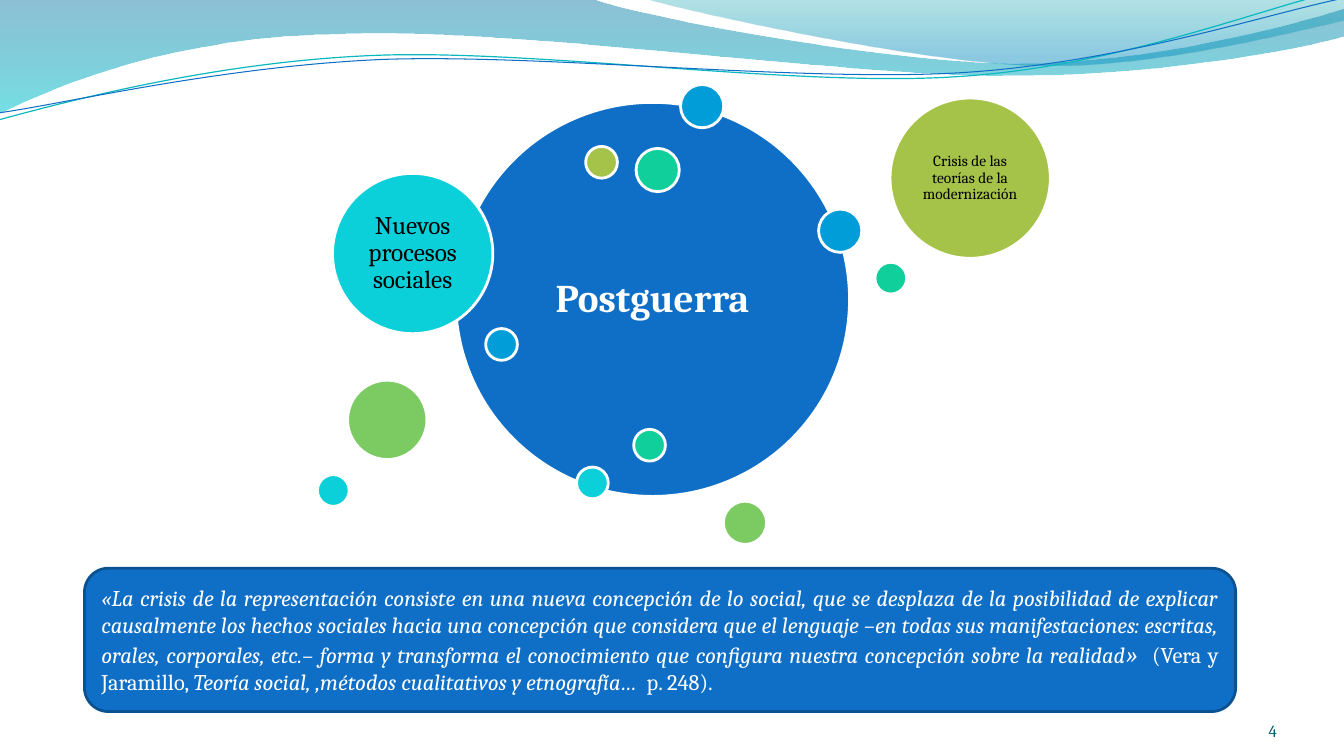
import math

import pptx
import pptx.util
import pptx.oxml
import pptx.oxml.ns
from pptx.dml.color import RGBColor
from pptx.enum.shapes import MSO_SHAPE
from pptx.enum.text import MSO_ANCHOR, PP_ALIGN

Cm = pptx.util.Cm
Pt = pptx.util.Pt
qn = pptx.oxml.ns.qn

WHITE = RGBColor(0xFF, 0xFF, 0xFF)
BLACK = RGBColor(0, 0, 0)
BLUE = RGBColor(0x0F, 0x6F, 0xC6)
NAVY = RGBColor(0x0B, 0x52, 0x92)
SKY = RGBColor(0x00, 0x9D, 0xD9)
CYAN = RGBColor(0x0B, 0xD0, 0xD9)
MINT = RGBColor(0x10, 0xCF, 0x9B)
GREEN = RGBColor(0x7C, 0xCA, 0x62)
OLIVE = RGBColor(0xA5, 0xC2, 0x49)
TEAL = RGBColor(0x0A, 0xB8, 0xBF)
SLATE = RGBColor(0x04, 0x5D, 0x75)

# Wave outlines in cm: two numbers are a line, six a curve
# Stops: place, colour, opacity in percent
WAVES = [
    ([(0, 0), (14.91, -0.03), (16.1, 0.43, 22.48, 1.6, 25.68, 1.6),
      (28.91, 1.6, 32.46, 0.66, 33.86, 0.23), (33.91, 0.91),
      (33.3, 1.12, 29.46, 1.93, 25.25, 1.91),
      (21.06, 1.91, 12.93, 0.71, 8.71, 0.86),
      (4.37, 0.91, 1.55, 2.11, -0.03, 2.87)],
     [(0, RGBColor(0x00, 0x74, 0xA1), 45), (1, RGBColor(0x00, 0xC6, 0xCF), 55)]),
    ([(16.23, -0.03), (17.25, 0.28, 23.09, 1.57, 26.04, 1.65),
      (28.98, 1.75, 32.56, 0.81, 33.86, 0.53), (33.86, 0)],
     [(0, RGBColor(0x00, 0xA1, 0xA9), 30), (0.8, RGBColor(0x00, 0x8B, 0xBF), 45)]),
]
# Thin curves, tilted about a middle point
TILT = 2.7
CURVES = [
    ([(-0.03, 3.02), (1.63, 2.57, 5.36, 1.57, 9.37, 1.4),
      (13.39, 1.22, 20.07, 2.21, 24.13, 1.93),
      (28.19, 1.68, 31.8, 0.2, 33.81, -0.25)], (16.89, 1.46), TEAL, 0.85),
    ([(0, 2.84), (1.6, 2.62, 5.54, 1.68, 9.6, 1.5),
      (13.64, 1.35, 20.22, 2.08, 24.26, 1.83),
      (28.32, 1.57, 31.88, 0.36, 33.88, -0.05)], (16.94, 1.5), BLUE, 0.75),
]

# Circles: left, top, width, colour
HUB, LOBE, BALL, DOT, BEAD = 9.93, 4.04, 2, 1.09, 0.8
DISCS = [
    (11.48, 2.58, HUB, BLUE), (17.15, 2.13, DOT, SKY), (14.53, 11.77, BEAD, CYAN),
    (22.05, 6.61, BEAD, MINT), (18.23, 12.63, DOT, GREEN), (14.76, 3.69, BEAD, OLIVE),
    (12.24, 8.28, BEAD, SKY), (8.38, 4.37, LOBE, CYAN), (16.03, 3.74, DOT, MINT),
    (8.76, 9.58, BALL, GREEN), (22.43, 2.47, LOBE, OLIVE), (20.63, 5.27, DOT, SKY),
    (8, 11.96, BEAD, CYAN), (15.97, 10.82, BEAD, MINT),
]
# Labels by circle: text, inset, font
LABELS = {
    0: ("Postguerra", 0.3, {"size": Pt(28), "bold": True, "color": WHITE}),
    7: ("Nuevos procesos sociales", 0.18, {"size": Pt(18), "color": BLACK}),
    10: ("Crisis de las teorías de la modernización", 0.13,
         {"size": Pt(11), "color": BLACK}),
}

QUOTE = [
    ("«La crisis de la representación consiste en una nueva concepción de lo "
     "social, que se desplaza de la posibilidad de explicar causalmente los "
     "hechos sociales hacia una concepción que considera que el lenguaje –en "
     "todas sus manifestaciones: escritas, orales, corporales, etc.– forma y "
     "transforma el conocimiento que configura nuestra concepción sobre la "
     "realidad", 16, True),
    ("»  ", 18, True),
    ("(Vera y Jaramillo, ", 16, False),
    ("Teoría social, ,métodos cualitativos y etnografía…", 16, True),
    ("  p. 248).", 16, False),
]


def level(part, mid):
    """Turn the points of one path part by the tilt."""
    cos, sin = math.cos(math.radians(TILT)), math.sin(math.radians(TILT))
    flat = []
    for x, y in zip(part[::2], part[1::2]):
        dx, dy = x - mid[0], y - mid[1]
        flat += [mid[0] + dx * cos - dy * sin, mid[1] + dx * sin + dy * cos]
    return flat


def outline(slide, path, close):
    """Draw a freeform, then join each curve's three points into one curve."""
    pts = [(Cm(x), Cm(y)) for part in path for x, y in zip(part[::2], part[1::2])]
    pen = slide.shapes.build_freeform(*pts[0])
    pen.add_line_segments(pts[1:], close=close)
    shape = pen.convert_to_shape()
    shape.shadow.inherit = False
    legs = iter(list(shape._element.spPr.iter(qn("a:lnTo"))))
    for part in path[1:]:
        first = next(legs)
        if len(part) == 6:
            first.tag = qn("a:cubicBezTo")
            for _ in range(2):
                leg = next(legs)
                first.append(leg[0])
                leg.getparent().remove(leg)
    return shape


def wave(slide, path, stops):
    shape = outline(slide, path, True)
    shape.line.fill.background()
    fill = shape.fill
    fill.gradient()
    fill.gradient_angle = 270
    for stop, (place, color, _) in zip(fill.gradient_stops, stops):
        stop.position = place
        stop.color.rgb = color
    tints = list(shape._element.spPr.iter(qn("a:srgbClr")))
    for tint, (_, _, part) in zip(tints, stops):
        tint.append(pptx.oxml.parse_xml(
            '<a:alpha %s val="%d"/>' % (pptx.oxml.ns.nsdecls("a"), part * 1000)))


def curve(slide, path, mid, color, width):
    shape = outline(slide, [level(part, mid) for part in path], False)
    shape.rotation = -TILT
    shape.fill.background()
    shape.line.color.rgb = color
    shape.line.width = Pt(width)


def solid(slide, kind, spot, color, edge):
    shape = slide.shapes.add_shape(kind, *[Cm(v) for v in spot])
    shape.shadow.inherit = False
    shape.fill.solid()
    shape.fill.fore_color.rgb = color
    shape.line.color.rgb = edge
    shape.line.width = Pt(2)
    return shape


def frame(shape, anchor, inset=None):
    text = shape.text_frame
    look = {"word_wrap": True, "vertical_anchor": anchor}
    if inset is not None:
        for side in ("left", "top", "right", "bottom"):
            look["margin_" + side] = Cm(inset)
    for key, val in look.items():
        setattr(text, key, val)
    return text.paragraphs[0]


def write(para, text, look):
    run = para.add_run()
    run.text = text
    run.font.name = "Cambria"
    for key, val in look.items():
        if key == "color":
            run.font.color.rgb = val
        else:
            setattr(run.font, key, val)


def main():
    prs = pptx.Presentation()
    prs.slide_width, prs.slide_height = Cm(33.87), Cm(19.05)
    slide = prs.slides.add_slide(prs.slide_layouts[6])

    # Wavy header
    for item in WAVES:
        wave(slide, *item)
    for item in CURVES:
        curve(slide, *item)

    # Page number
    box = slide.shapes.add_textbox(Cm(29.36), Cm(17.65), Cm(2.82), Cm(1.02))
    para = frame(box, MSO_ANCHOR.BOTTOM, 0)
    para.alignment = PP_ALIGN.RIGHT
    write(para, "4", {"size": Pt(12), "color": SLATE})

    # Circles and their labels
    for i, (left, top, size, color) in enumerate(DISCS):
        disc = solid(slide, MSO_SHAPE.OVAL, (left, top, size, size), color, WHITE)
        if i in LABELS:
            text, inset, look = LABELS[i]
            para = frame(disc, MSO_ANCHOR.MIDDLE, inset)
            para.alignment = PP_ALIGN.CENTER
            para.line_spacing = 0.9
            write(para, text, look)

    # Quotation
    panel = solid(slide, MSO_SHAPE.ROUNDED_RECTANGLE, (2.13, 14.32, 29.01, 3.61),
                  BLUE, NAVY)
    para = frame(panel, MSO_ANCHOR.MIDDLE)
    para.alignment = PP_ALIGN.JUSTIFY
    for text, size, slant in QUOTE:
        write(para, text, {"size": Pt(size), "italic": slant, "color": WHITE})

    prs.save("out.pptx")


if __name__ == "__main__":
    main()
